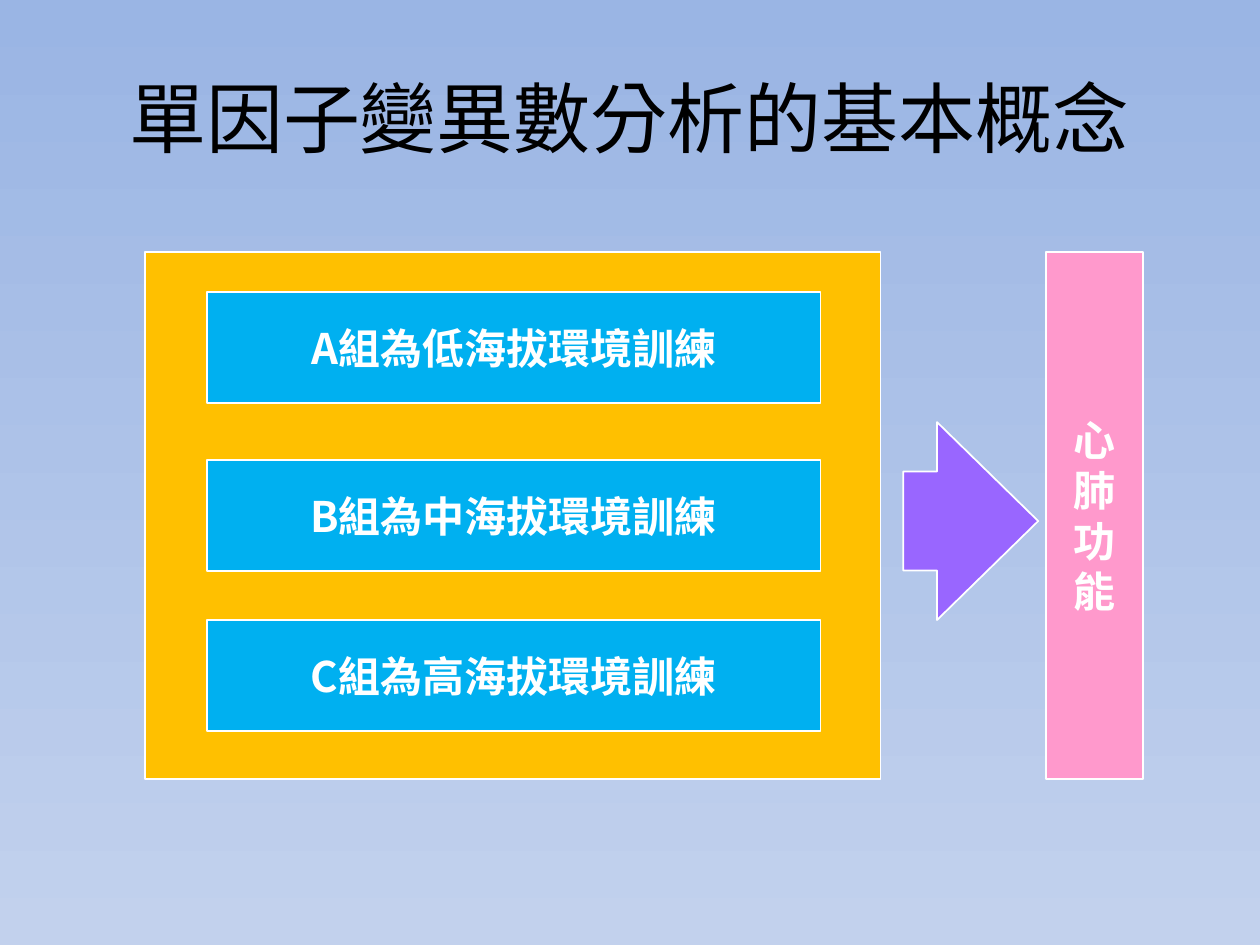
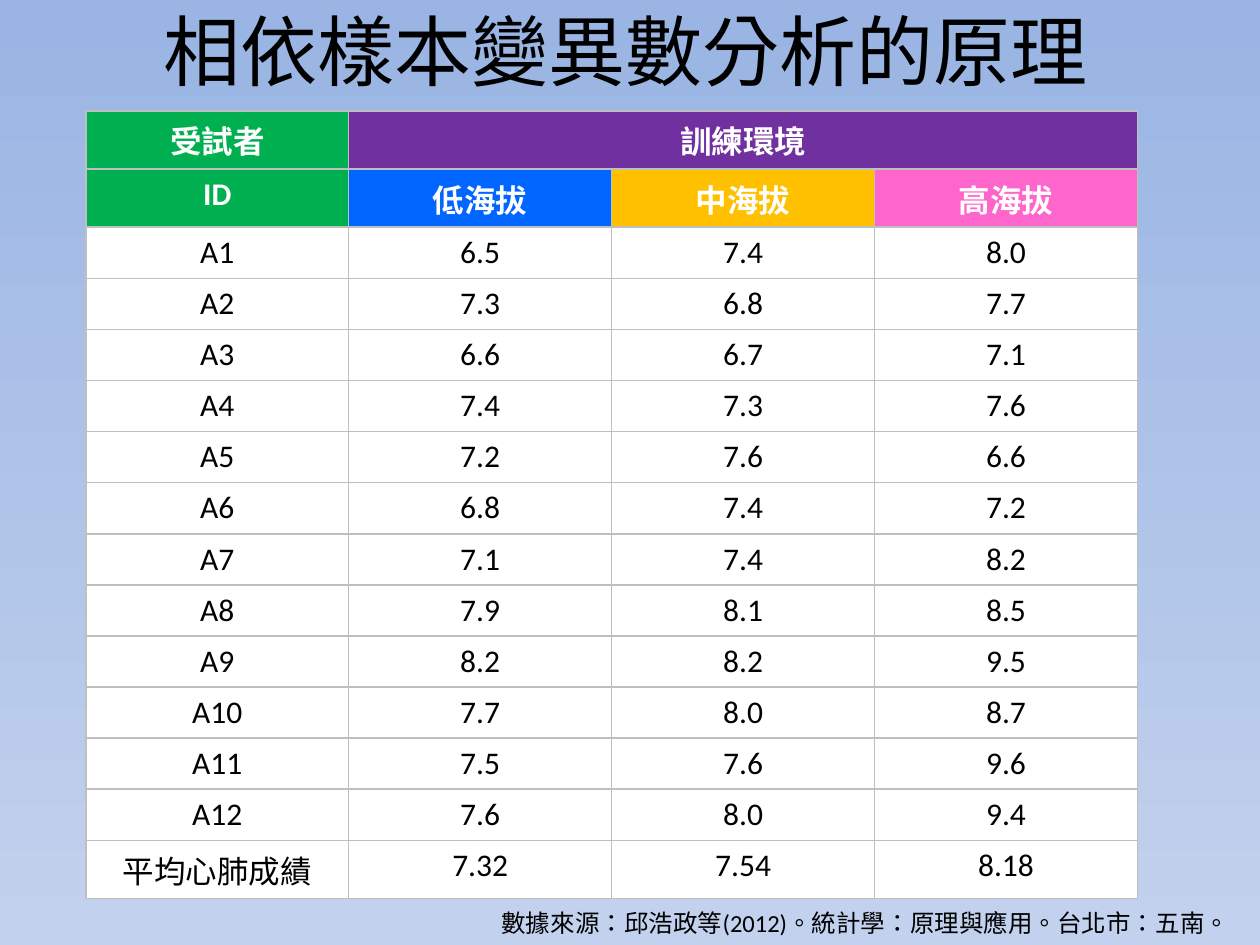
"""Two slides on one-way and dependent-sample analysis of variance."""
from dataclasses import dataclass

from lxml import etree
from pptx import Presentation
from pptx import util as u
from pptx.dml.color import RGBColor
from pptx.enum import shapes, text
from pptx.oxml.ns import qn


@dataclass(frozen=True)
class Theme:
    """Colours, fonts and type sizes shared by the slides."""
    sky_top: str = "9AB5E4"
    sky_bottom: str = "C2D1ED"
    black: str = "000000"
    white: str = "FFFFFF"
    amber: str = "FFC000"
    cyan: str = "00B0F0"
    violet: str = "9966FF"
    rose: str = "FF99CC"
    green: str = "00B050"
    purple: str = "7030A0"
    blue: str = "0066FF"
    pink: str = "FF66CC"
    grid: str = "BFBFBF"
    cjk: str = "Noto Sans CJK SC"
    latin: str = "Calibri"
    title: int = 44
    label: int = 24
    cell: int = 18
    source: int = 14


T = Theme()
HEADER_ROWS = [["受試者", "訓練環境", "", ""], ["ID", "低海拔", "中海拔", "高海拔"]]
HEADER_FILLS = [[T.green, T.purple, T.purple, T.purple],
                [T.green, T.blue, T.amber, T.pink]]
SCORES = [
    ("6.5", "7.4", "8.0"), ("7.3", "6.8", "7.7"), ("6.6", "6.7", "7.1"),
    ("7.4", "7.3", "7.6"), ("7.2", "7.6", "6.6"), ("6.8", "7.4", "7.2"),
    ("7.1", "7.4", "8.2"), ("7.9", "8.1", "8.5"), ("8.2", "8.2", "9.5"),
    ("7.7", "8.0", "8.7"), ("7.5", "7.6", "9.6"), ("7.6", "8.0", "9.4"),
]
MEANS = ["平均心肺成績", "7.32", "7.54", "8.18"]


def rgb(color):
    """Turn a hex string into a colour."""
    return RGBColor.from_string(color)


def box(*lengths):
    """Convert left, top, width and height from centimetres."""
    return [u.Cm(n) for n in lengths]


def write(tf, words, size, color, latin=T.cjk, bold=False, align=text.PP_ALIGN.CENTER):
    """Write one paragraph in Traditional Chinese."""
    p = tf.paragraphs[0]
    p.add_run().text = words
    p.alignment = align
    font = p.font
    font.size, font.bold, font.name = u.Pt(size), bold, latin
    font.color.rgb = rgb(color)
    props = p._p.pPr.find(qn("a:defRPr"))
    props.set("lang", "zh-TW")
    etree.SubElement(props, qn("a:ea")).set("typeface", T.cjk)


def add_slide(prs):
    """Add a blank slide with the shared gradient."""
    s = prs.slides.add_slide(prs.slide_layouts[6])
    fill = s.background.fill
    fill.gradient()
    fill.gradient_angle = 270
    for stop, color in zip(fill.gradient_stops, (T.sky_top, T.sky_bottom)):
        stop.color.rgb = rgb(color)
    return s


def add_title(s, words, *place):
    """Add a centred slide title."""
    tf = s.shapes.add_textbox(*box(*place)).text_frame
    tf.word_wrap = True
    tf.vertical_anchor = text.MSO_ANCHOR.MIDDLE
    write(tf, words, T.title, T.black)


def add_block(s, place, color, words="", kind=shapes.MSO_SHAPE.RECTANGLE):
    """Add a white-edged shape with an optional bold label."""
    sp = s.shapes.add_shape(kind, *box(*place))
    sp.shadow.inherit = False
    sp.fill.solid()
    sp.fill.fore_color.rgb = rgb(color)
    sp.line.color.rgb = rgb(T.white)
    sp.line.width = u.Pt(1)
    if words:
        tf = sp.text_frame
        tf.word_wrap = True
        tf.vertical_anchor = text.MSO_ANCHOR.MIDDLE
        write(tf, words, T.label, T.white, bold=True)
    return sp


def style_cell(cell, color):
    """Give a cell grey borders and a solid fill."""
    props = cell._tc.get_or_add_tcPr()
    for side in ("lnL", "lnR", "lnT", "lnB"):
        line = etree.SubElement(props, qn(f"a:{side}"), w=str(u.Pt(1)))
        paint = etree.SubElement(line, qn("a:solidFill"))
        etree.SubElement(paint, qn("a:srgbClr"), val=T.grid)
    cell.fill.solid()
    cell.fill.fore_color.rgb = rgb(color)


def add_score_table(s, left, top, col_width, tall, short):
    """Add the table of scores by training altitude."""
    body = [[f"A{i}", *row] for i, row in enumerate(SCORES, 1)]
    rows = HEADER_ROWS + body + [MEANS]
    heights = [tall] * 2 + [short] * len(body) + [tall]
    place = box(left, top, 4 * col_width, sum(heights))
    table = s.shapes.add_table(len(rows), 4, *place).table
    table.first_row = table.horz_banding = False
    for column in table.columns:
        column.width = u.Cm(col_width)
    for i, (row, height) in enumerate(zip(rows, heights)):
        table.rows[i].height = u.Cm(height)
        header = i < len(HEADER_ROWS)
        for j, words in enumerate(row):
            cell = table.cell(i, j)
            style_cell(cell, HEADER_FILLS[i][j] if header else T.white)
            if words:
                write(cell.text_frame, words, T.cell,
                      T.white if header else T.black, T.latin, header)
    table.cell(0, 1).merge(table.cell(0, 3))


def add_source(s, words, *place):
    """Add the source line of the data."""
    tf = s.shapes.add_textbox(*box(*place)).text_frame
    tf.word_wrap = False
    write(tf, words, T.source, T.black, T.latin, align=text.PP_ALIGN.LEFT)


def concept_slide(prs):
    """Show three training groups leading to one outcome."""
    s = add_slide(prs)
    add_title(s, "單因子變異數分析的基本概念", 1.27, 0.76, 22.86, 3.18)
    add_block(s, (2.92, 5.08, 14.83, 10.62), T.amber)
    arrow = add_block(s, (18.21, 8.51, 2.72, 3.99), T.violet,
                      kind=shapes.MSO_SHAPE.RIGHT_ARROW)
    arrow.adjustments[1] = 0.75
    add_block(s, (21.08, 5.08, 1.96, 10.62), T.rose, "心肺功能")
    for group, level, top in zip("ABC", "低中高", (5.89, 9.27, 12.5)):
        add_block(s, (4.17, top, 12.37, 2.24), T.cyan, f"{group}組為{level}海拔環境訓練")


def scores_slide(prs):
    """Show the scores of each subject in three settings."""
    s = add_slide(prs)
    add_title(s, "相依樣本變異數分析的原理", 1.19, 0, 22.86, 2.01)
    add_score_table(s, 1.73, 2.24, 5.3, tall=1.17, short=1.03)
    add_source(s, "數據來源：邱浩政等(2012)。統計學：原理與應用。台北市：五南。",
               9.86, 18.19, 15.29, 0.86)


def main():
    """Build and save the deck."""
    prs = Presentation()
    prs.slide_width, prs.slide_height = u.Cm(25.4), u.Cm(19.05)
    concept_slide(prs)
    scores_slide(prs)
    prs.save("out.pptx")


if __name__ == "__main__":
    main()
